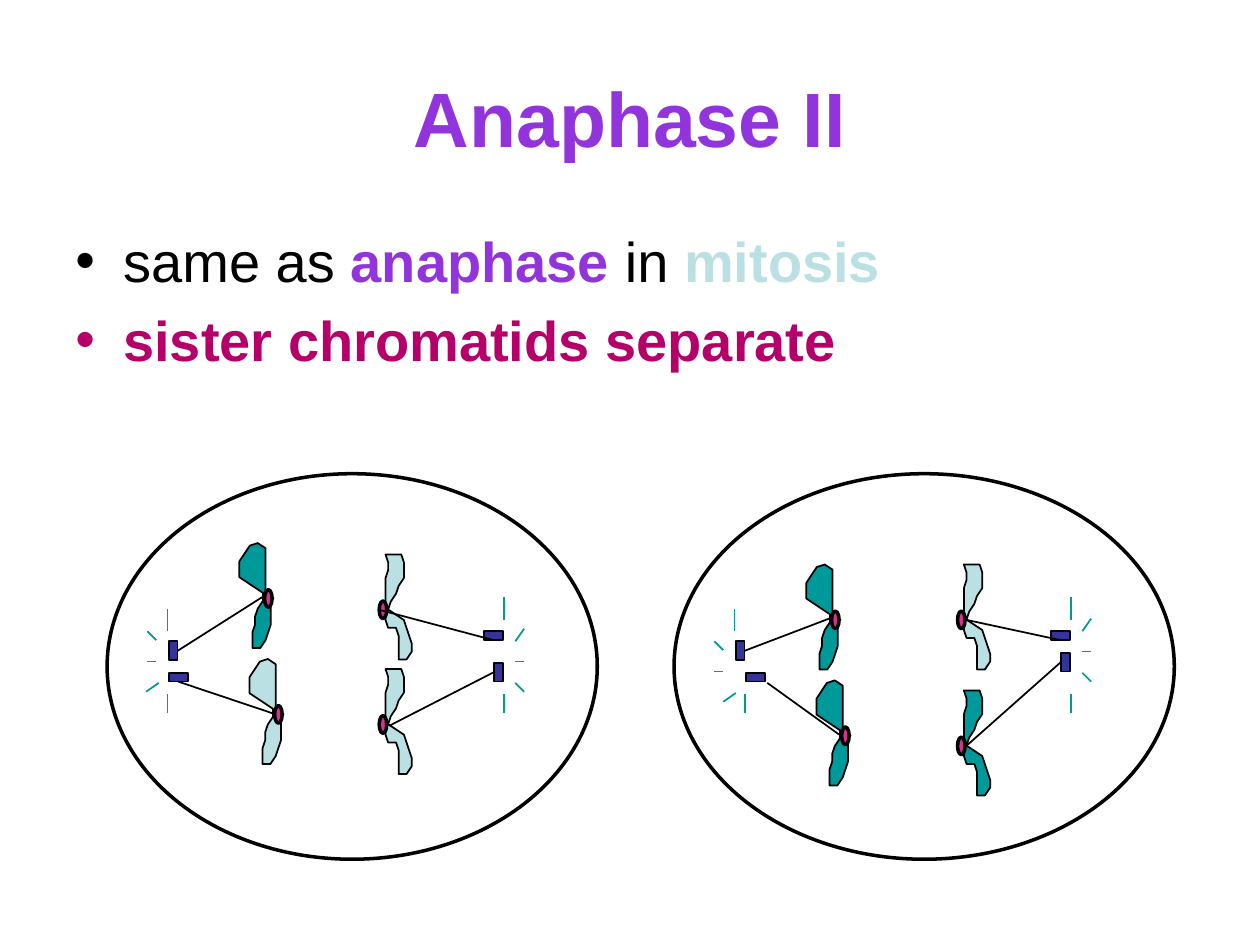
from dataclasses import dataclass

from lxml import etree
from pptx import Presentation
from pptx.dml.color import RGBColor
from pptx.enum.shapes import MSO_CONNECTOR, MSO_SHAPE
from pptx.enum.text import MSO_ANCHOR, PP_ALIGN
from pptx.oxml.ns import qn
from pptx.util import Inches, Pt

LINE = MSO_CONNECTOR.STRAIGHT
RECT = MSO_SHAPE.RECTANGLE
OVAL = MSO_SHAPE.OVAL
CENTER = PP_ALIGN.CENTER
MIDDLE = MSO_ANCHOR.MIDDLE


@dataclass(frozen=True)
class Theme:
    """Fonts, type sizes and colours of the slide."""
    font: str = "Arial"
    title_size: int = 44
    body_size: int = 32
    purple: str = "9234DB"
    magenta: str = "B50069"
    pale: str = "BBE0E3"
    teal: str = "009999"
    navy: str = "333399"
    pink: str = "D93192"
    black: str = "000000"


T = Theme()
TOP, LEFT, BOTTOM, RIGHT = range(4)
GRID = Inches(1) / 48
LEFT_CHROMATID = [
    (13, 21), (10, 20), (10, 2), (7, 0), (4, 1), (2, 4), (0, 7), (0, 13),
    (9, 19), (9, 22), (7, 25), (6, 28), (6, 31), (5, 34), (5, 40), (8, 40),
    (10, 37), (12, 31), (12, 22)]
RIGHT_CHROMATID = [
    (1, 21), (0, 18), (0, 9), (1, 6), (1, 3), (0, 0), (6, 0), (7, 3),
    (7, 9), (5, 12), (4, 15), (2, 18), (1, 21), (7, 25), (10, 34), (10, 37),
    (8, 40), (5, 40), (5, 31), (4, 28), (1, 28), (0, 25), (0, 22)]


def style_run(r, size, color, bold):
    """Set the font of one run."""
    r.font.name, r.font.size, r.font.bold = T.font, Pt(size), bold
    r.font.color.rgb = RGBColor.from_string(color)


def style_shape(sp, fill, width=1):
    """Give a shape its fill and black outline without a shadow."""
    sp.shadow.inherit = False
    if fill:
        sp.fill.solid()
        sp.fill.fore_color.rgb = RGBColor.from_string(fill)
    else:
        sp.fill.background()
    sp.line.color.rgb = RGBColor.from_string(T.black)
    sp.line.width = Pt(width)


def add_preset(slide, kind, x, y, w, h, fill, width=1):
    """Add a preset shape, with lengths in inches."""
    sp = slide.shapes.add_shape(kind, Inches(x), Inches(y), Inches(w), Inches(h))
    style_shape(sp, fill, width)
    return sp


def add_line(slide, x1, y1, x2, y2, color):
    """Add a thin straight line, with lengths in inches."""
    line = slide.shapes.add_connector(
        LINE, Inches(x1), Inches(y1), Inches(x2), Inches(y2))
    line.line.color.rgb = RGBColor.from_string(color)
    line.line.width = Pt(1)
    etree.SubElement(line._element.spPr, qn("a:effectLst"))
    return line


def add_title(slide, text, x, y, w, h):
    """Place and format the title placeholder."""
    sp = slide.shapes.title
    sp.left, sp.top, sp.width, sp.height = map(Inches, (x, y, w, h))
    tf = sp.text_frame
    tf.text = text
    tf.vertical_anchor = MIDDLE
    tf.paragraphs[0].alignment = CENTER
    style_run(tf.paragraphs[0].runs[0], T.title_size, T.purple, True)


def add_bullets(slide, items, x, y, w, h):
    """Add bulleted paragraphs made of (text, colour, bold) runs."""
    tf = slide.shapes.add_textbox(*map(Inches, (x, y, w, h))).text_frame
    tf.word_wrap = True
    for i, runs in enumerate(items):
        p = tf.add_paragraph() if i else tf.paragraphs[0]
        p.space_before = Pt(T.body_size * 0.2)
        pPr = p._p.get_or_add_pPr()
        pPr.set("marL", str(Inches(0.38)))
        pPr.set("indent", str(-Inches(0.38)))
        etree.SubElement(pPr, qn("a:buFont")).set("typeface", T.font)
        etree.SubElement(pPr, qn("a:buChar")).set("char", "•")
        for text, color, bold in runs:
            r = p.add_run()
            r.text = text
            style_run(r, T.body_size, color, bold)


def add_chromatid(slide, points, x, y, color):
    """Draw a chromatid outline with its top left corner at x, y."""
    fb = slide.shapes.build_freeform(*points[0], scale=GRID)
    fb.add_line_segments(points[1:], close=True)
    style_shape(fb.convert_to_shape(Inches(x), Inches(y)), color)


def add_pole(slide, x, y, upright, flat, rays):
    """Draw two centrioles and their aster, and return the centrioles."""
    for x1, y1, x2, y2 in rays:
        add_line(slide, x + x1, y + y1, x + x2, y + y2, T.teal)
    return [add_preset(slide, RECT, x + dx, y + dy, w, h, T.navy)
            for (dx, dy), w, h in ((upright, 0.07, 0.15), (flat, 0.15, 0.07))]


def add_left_pole(slide, x, y, shift):
    """Draw the left pole, with its lower parts moved by shift."""
    rays = [(0.48, 1.25, 0.48, 1.07),
            (0.32, 1.25 + shift, 0.39, 1.32 + shift),
            (0.32, 1.49 + shift, 0.39, 1.49 + shift),
            (0.41 + shift, 1.66 + shift, 0.31 + shift, 1.73 + shift),
            (0.48 + shift, 1.75, 0.48 + shift, 1.9)]
    return add_pole(slide, x, y, (0.49, 1.33), (0.49 + shift, 1.58), rays)


def add_right_pole(slide, x, y, shift):
    """Draw the right pole, with its middle parts raised by shift."""
    rays = [(3.15, 1.16, 3.15, 0.98),
            (3.24, 1.33 - shift, 3.31, 1.23 - shift),
            (3.24, 1.49 - shift, 3.31, 1.49 - shift),
            (3.24, 1.66 - shift, 3.31, 1.73 - shift),
            (3.15, 1.75, 3.15, 1.9)]
    return add_pole(slide, x, y, (3.07, 1.5 - shift), (2.99, 1.25), rays)


def add_cell(slide, x, y, w, h, lefts, rights, shift, fibres):
    """Draw a dividing cell with chromatids, poles and spindle fibres."""
    sides = ((lefts, LEFT_CHROMATID, 0.2), (rights, RIGHT_CHROMATID, -0.05))
    for chromatids, points, _ in sides:
        for dx, dy, color in chromatids:
            add_chromatid(slide, points, x + dx, y + dy, color)
    add_preset(slide, OVAL, x, y, w, h, None, 2)
    upright_l, flat_l = add_left_pole(slide, x, y, shift)
    upright_r, flat_r = add_right_pole(slide, x, y, shift)
    for chromatids, _, offset in sides:
        for dx, dy, _ in chromatids:
            add_preset(slide, OVAL, x + dx + offset, y + dy + 0.37,
                       0.06, 0.14, T.pink, 2)
    ends = ((upright_l, RIGHT), (flat_l, BOTTOM), (flat_r, BOTTOM), (upright_r, LEFT))
    for (x1, y1, x2, y2, joined), (sp, side) in zip(fibres, ends):
        line = add_line(slide, x + x1, y + y1, x + x2, y + y2, T.black)
        if joined:
            line.begin_connect(sp, side)


def main():
    """Build and save the slide."""
    prs = Presentation()
    prs.slide_width, prs.slide_height = Inches(10), Inches(7.5)
    slide = prs.slides.add_slide(prs.slide_layouts[5])
    add_title(slide, "Anaphase II", 0.5, 0.3, 9, 1.25)
    add_bullets(slide, [
        [("same as ", T.black, False), ("anaphase", T.purple, True),
         (" in ", T.black, False), ("mitosis", T.pale, True)],
        [("sister chromatids separate", T.magenta, True)],
    ], 0.5, 1.75, 9, 4.95)
    add_cell(slide, 0.85, 3.76, 3.89, 3.06,
             [(1.05, 0.55, T.teal), (1.13, 1.47, T.pale)],
             [(2.21, 0.64, T.pale), (2.21, 1.55, T.pale)], 0,
             [(0.57, 1.41, 1.23, 0.98, True), (0.57, 1.66, 1.31, 1.9, True),
              (3.06, 1.32, 2.16, 1.08, True), (3.06, 1.57, 2.24, 2, True)])
    add_cell(slide, 5.35, 3.76, 3.97, 3.06,
             [(1.05, 0.72, T.teal), (1.13, 1.64, T.teal)],
             [(2.3, 0.72, T.pale), (2.3, 1.72, T.teal)], 0.08,
             [(0.57, 1.41, 1.23, 1.15, True), (0.74, 1.66, 1.31, 2.07, False),
              (3.06, 1.32, 2.32, 1.16, True), (3.06, 1.48, 2.32, 2.16, True)])
    prs.save("out.pptx")


if __name__ == "__main__":
    main()
